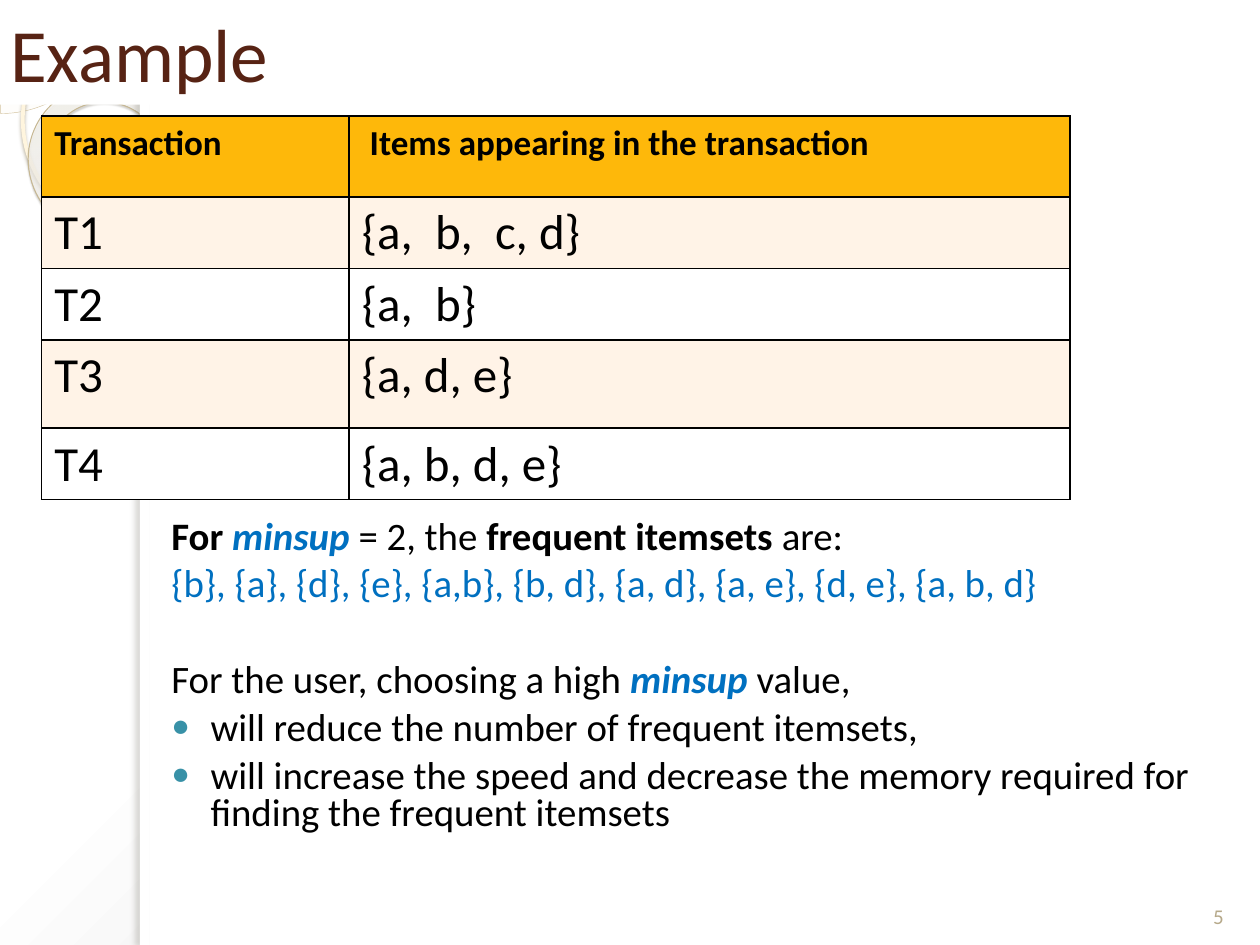
import pptx
import pptx.dml.color
import pptx.enum.shapes
import pptx.enum.text
import pptx.oxml
import pptx.oxml.ns
import pptx.util

Cm = pptx.util.Cm
Pt = pptx.util.Pt
SHAPES = pptx.enum.shapes.MSO_SHAPE
ALIGN = pptx.enum.text.PP_ALIGN
ANCHOR = pptx.enum.text.MSO_ANCHOR
BLACK, WHITE, BLUE = "000000", "FFFFFF", "0070C0"
BULLET_INDENT = 0.79


def color(hex_string):
    return pptx.dml.color.RGBColor.from_string(hex_string)


def element(xml):
    head, rest = xml.split(">", 1)
    slash = "/" if head.endswith("/") else ""
    head = head.rstrip("/")
    return pptx.oxml.parse_xml(f"{head} {pptx.oxml.ns.nsdecls('a', 'p')}{slash}>{rest}")


def solid(hex_string, alpha=100):
    return f'<a:srgbClr val="{hex_string}"><a:alpha val="{alpha * 1000}"/></a:srgbClr>'


def gradient(stops, left, top, right, bottom):
    stop_list = "".join(
        f'<a:gs pos="{position * 1000}">{solid(*paint)}</a:gs>' for position, *paint in stops
    )
    return (
        f'<a:gradFill rotWithShape="1"><a:gsLst>{stop_list}</a:gsLst><a:path path="circle">'
        f'<a:fillToRect l="{left * 1000}" t="{top * 1000}" r="{right * 1000}" b="{bottom * 1000}"/>'
        "</a:path></a:gradFill>"
    )


class SlideBuilder:
    font = "Calibri"

    def __init__(self, presentation):
        self.slide = presentation.slides.add_slide(presentation.slide_layouts[1])

    def background(self, fill):
        self.slide._element.cSld.insert(
            0, element(f"<p:bg><p:bgPr>{fill}<a:effectLst/></p:bgPr></p:bg>")
        )

    def place(self, shape, box):
        shape.left, shape.top, shape.width, shape.height = (Cm(length) for length in box)

    def run(self, paragraph, text, size, hex_string=BLACK, bold=False, italic=False):
        run = paragraph.add_run()
        run.text = text
        run.font.name = self.font
        run.font.size = Pt(size)
        run.font.color.rgb = color(hex_string)
        run.font.bold = bold
        run.font.italic = italic

    def decoration(self, kind, box, fill=None, alpha=100, fill_xml=None, line=None,
                   shadow=None, rotation=0, adjustments=()):
        shape = self.slide.shapes.add_shape(kind, *(Cm(length) for length in box))
        shape.rotation = rotation
        for index, value in enumerate(adjustments):
            shape.adjustments[index] = value
        shape.fill.background()
        properties = shape._element.spPr
        if fill:
            fill_xml = f"<a:solidFill>{solid(fill, alpha)}</a:solidFill>"
        if fill_xml:
            no_fill = properties.find(pptx.oxml.ns.qn("a:noFill"))
            properties.replace(no_fill, element(fill_xml))
        if line:
            shape.line.color.rgb = color(line[0])
            shape.line.width = Pt(line[1])
        else:
            shape.line.fill.background()
        shape.shadow.inherit = False
        if shadow:
            paint, opacity, blur, distance, angle = shadow
            properties.find(pptx.oxml.ns.qn("a:effectLst")).append(element(
                f'<a:outerShdw blurRad="{Pt(blur)}" dist="{Pt(distance)}" dir="{angle * 60000}" '
                f'algn="tl" rotWithShape="0">{solid(paint, opacity)}</a:outerShdw>'
            ))
        self.slide.shapes.title._element.addprevious(shape._element)

    def title(self, text, box):
        title = self.slide.shapes.title
        self.place(title, box)
        title.fill.solid()
        title.fill.fore_color.rgb = color(WHITE)
        frame = title.text_frame
        frame.auto_size = pptx.enum.text.MSO_AUTO_SIZE.NONE
        frame.vertical_anchor = ANCHOR.MIDDLE
        paragraph = frame.paragraphs[0]
        paragraph.alignment = ALIGN.LEFT
        self.run(paragraph, text, 43, "572314")

    def label(self, text, box):
        frame = self.slide.shapes.add_textbox(*(Cm(length) for length in box)).text_frame
        frame.word_wrap = True
        frame.vertical_anchor = ANCHOR.BOTTOM
        paragraph = frame.paragraphs[0]
        paragraph.alignment = ALIGN.CENTER
        self.run(paragraph, text, 12, "B6A98A")

    def table(self, rows, left, top, widths, heights):
        table = self.slide.shapes.add_table(
            len(rows), len(widths), Cm(left), Cm(top), Cm(sum(widths)), Cm(sum(heights))
        ).table
        for column, width in zip(table.columns, widths):
            column.width = Cm(width)
        for row, height in zip(table.rows, heights):
            row.height = Cm(height)
        for row_index, texts in enumerate(rows):
            header = row_index == 0
            fill = "FEB80A" if header else ("FFF3E7" if row_index % 2 else WHITE)
            for column_index, text in enumerate(texts):
                cell = table.cell(row_index, column_index)
                cell.fill.solid()
                cell.fill.fore_color.rgb = color(fill)
                for index, side in enumerate(("lnL", "lnR", "lnT", "lnB")):
                    cell._tc.tcPr.insert(index, element(
                        f'<a:{side} w="{Pt(1)}"><a:solidFill>{solid(BLACK)}</a:solidFill></a:{side}>'
                    ))
                self.run(cell.text_frame.paragraphs[0], text, 20 if header else 28, bold=header)

    def body(self, paragraphs, box):
        body = self.slide.placeholders[1]
        self.place(body, box)
        frame = body.text_frame
        frame.auto_size = pptx.enum.text.MSO_AUTO_SIZE.NONE
        for index, (bulleted, space, runs) in enumerate(paragraphs):
            paragraph = frame.add_paragraph() if index else frame.paragraphs[0]
            paragraph.line_spacing = 0.8
            paragraph.space_before = Pt(space)
            properties = paragraph._p.get_or_add_pPr()
            properties.set("marL", str(Cm(0.23 + BULLET_INDENT * bulleted)))
            properties.set("indent", str(-Cm(BULLET_INDENT * bulleted)))
            if bulleted:
                properties.append(element(f"<a:buClr>{solid('3891A7')}</a:buClr>"))
                properties.append(element('<a:buSzPct val="80000"/>'))
                properties.append(element('<a:buChar char="●"/>'))
            else:
                properties.append(element("<a:buNone/>"))
            for text, *style in runs:
                self.run(paragraph, text, 22.2, *style)


def main():
    presentation = pptx.Presentation()
    presentation.slide_width = Cm(25.4)
    presentation.slide_height = Cm(19.05)
    builder = SlideBuilder(presentation)

    builder.background(gradient(
        [(0, WHITE), (40, WHITE), (100, "C5C5C5")], -24, -20, 124, 120))
    builder.decoration(SHAPES.PIE, (-2.26, -2.26, 4.55, 4.55), "FEFAF4", 33,
                       line=("D3C39F", 0.25), adjustments=(0, 54.02))
    builder.decoration(SHAPES.OVAL, (0.46, 0.05, 4.72, 4.72), line=("FFF5DE", 2.15),
                       shadow=("B0A68F", 85, 2, 2, 90))
    ring_fill = gradient([(0, "FFFCF6", 70), (70, "FFFEFB", 55), (100, "F0D28E", 60)],
                         -408, -50, 508, 150)
    builder.decoration(SHAPES.DONUT, (0.56, 1.7, 3.12, 3.07), fill_xml=ring_fill,
                       line=("C7B893", 0.58), shadow=("5A5444", 35, 1, 1.2, 75),
                       rotation=38.6, adjustments=(0.12,))
    builder.decoration(SHAPES.RECTANGLE, (2.82, 0, 22.58, 19.05), WHITE)
    builder.decoration(SHAPES.RECTANGLE, (2.82, 0, 0.2, 19.05), WHITE,
                       shadow=("736F63", 25, 3, 3, 180))

    builder.title("Example", (-0.05, 0, 20.83, 2.11))
    builder.label("5", (23.93, 17.53, 1.27, 1.32))
    builder.table(
        [
            ("Transaction", " Items appearing in the transaction"),
            ("T1", "{a,  b,  c, d}"),
            ("T2", "{a,  b}"),
            ("T3", "{a, d, e}"),
            ("T4", "{a, b, d, e}"),
        ],
        0.84, 2.34, (6.2, 14.53), (1.63, 1.32, 1.32, 1.78, 1.32),
    )
    builder.body(
        [
            (False, 6, [("For ", BLACK, True), ("minsup ", BLUE, True, True), ("= 2, the ",),
                        ("frequent itemsets ", BLACK, True), ("are:",)]),
            (False, 6, [("{b}, {a}, {d}, {e}, {a,b}, {b, d}, {a, d}, {a, e}, {d, e}, {a, b, d}",
                         BLUE)]),
            (False, 33.4, [("For the user, choosing a high ",), ("minsup", BLUE, True, True),
                           (" value,",)]),
            (True, 6, [("will reduce the number of frequent itemsets,",)]),
            (True, 6, [("will increase the speed and decrease the memory required for "
                        "finding the frequent itemsets",)]),
        ],
        (2.97, 10.36, 21.84, 6.99),
    )
    presentation.save("out.pptx")


if __name__ == "__main__":
    main()
